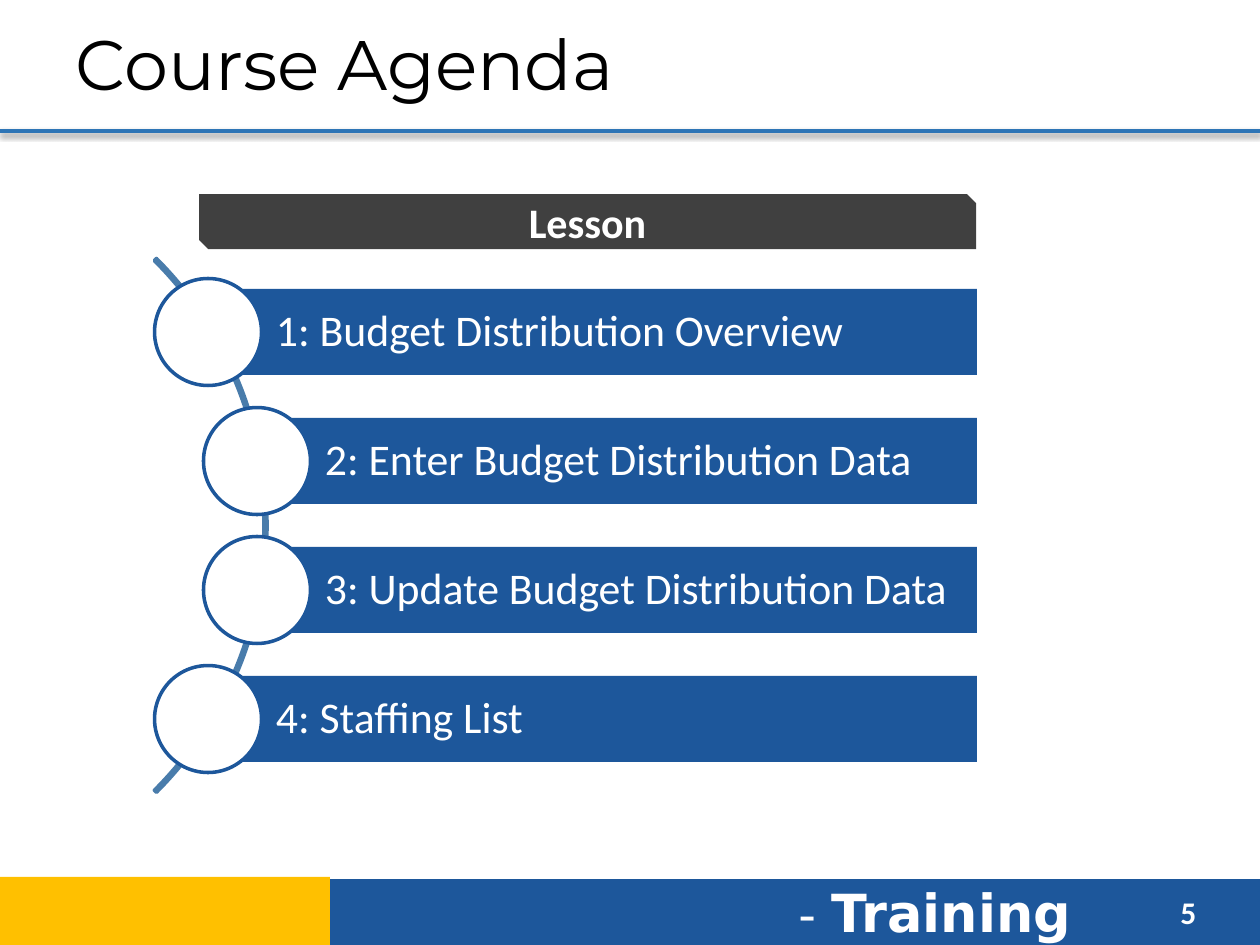
import pptx
import pptx.util
import pptx.dml.color
import pptx.enum.shapes
import pptx.enum.text
import pptx.oxml

COLORS = {
    "blue": "1D579B", "arc": "497CAB", "rule": "2E75B6", "gold": "FFC000",
    "header": "404040", "white": "FFFFFF", "black": "000000",
}
LESSONS = [
    "1: Budget Distribution Overview",
    "2: Enter Budget Distribution Data",
    "3: Update Budget Distribution Data",
    "4: Staffing List",
]
SHAPE = pptx.enum.shapes.MSO_SHAPE
ALIGN = pptx.enum.text.PP_ALIGN
MIDDLE = pptx.enum.text.MSO_ANCHOR.MIDDLE


def px(length):
    return pptx.util.Emu(round(length * 914400 / 126))


def color(name):
    return pptx.dml.color.RGBColor.from_string(COLORS[name])


def set_font(font, name, size, color_name, bold=False):
    font.name, font.size, font.bold = name, pptx.util.Pt(size), bold
    font.color.rgb = color(color_name)


def add_shape(slide, kind, box, fill=None, line=None):
    shape = slide.shapes.add_shape(kind, *map(px, box))
    shape.shadow.inherit = False
    if fill:
        shape.fill.solid()
        shape.fill.fore_color.rgb = color(fill)
    else:
        shape.fill.background()
    if line:
        shape.line.color.rgb = color(line)
        shape.line.width = pptx.util.Pt(2)
    else:
        shape.line.fill.background()
    return shape


def write(shape, text, size, align, bold=False):
    frame = shape.text_frame
    frame.word_wrap = True
    frame.vertical_anchor = MIDDLE
    paragraph = frame.paragraphs[0]
    paragraph.text = text
    paragraph.alignment = align
    set_font(paragraph.font, "Calibri", size, "white", bold)
    return paragraph


def add_rule(slide, y):
    rule = slide.shapes.add_connector(
        pptx.enum.shapes.MSO_CONNECTOR.STRAIGHT, 0, px(y), px(1260), px(y))
    rule.line.color.rgb = color("rule")
    rule.line.width = pptx.util.Pt(2.25)
    rule._element.spPr.append(pptx.oxml.parse_xml(
        '<a:effectLst xmlns:a="http://schemas.openxmlformats.org/drawingml/2006/main">'
        '<a:outerShdw blurRad="39370" dist="20320" dir="5400000" rotWithShape="0">'
        '<a:srgbClr val="000000"><a:alpha val="38000"/></a:srgbClr>'
        '</a:outerShdw></a:effectLst>'))


def add_footer(slide):
    add_shape(slide, SHAPE.RECTANGLE, (329, 879, 931, 69), "blue")
    label = slide.shapes.add_textbox(*map(px, (786, 874, 353, 77)))
    label.text_frame.word_wrap = True
    paragraph = label.text_frame.paragraphs[0]
    for text, size, bold in (("- ", 28, False), ("Training", 30, True)):
        run = paragraph.add_run()
        run.text = text
        set_font(run.font, "DejaVu Sans", size, "white", bold)
    number = slide.shapes.add_textbox(*map(px, (1168, 887, 76, 50)))
    write(number, "5", 18, ALIGN.LEFT, bold=True)
    add_shape(slide, SHAPE.RECTANGLE, (-1, 877, 331, 69), "gold")


def add_title(slide, text):
    title = slide.shapes.title
    title.left, title.top, title.width, title.height = map(px, (63, 4, 1134, 117))
    title.text_frame.vertical_anchor = MIDDLE
    paragraph = title.text_frame.paragraphs[0]
    paragraph.text = text
    paragraph.alignment = ALIGN.LEFT
    set_font(paragraph.font, "Montserrat", 40, "black")


def add_lesson(slide, text, left, top):
    right, height, diameter = 977, 86, 107
    bar = add_shape(slide, SHAPE.RECTANGLE, (left, top, right - left, height), "blue")
    paragraph = write(bar, text, 25, ALIGN.LEFT)
    paragraph.line_spacing = 0.9
    frame = bar.text_frame
    frame.margin_left = px(68)
    frame.margin_top = frame.margin_right = frame.margin_bottom = px(9)
    # Circle centred on the left end of the bar
    add_shape(slide, SHAPE.OVAL,
              (left - diameter / 2, top + (height - diameter) / 2, diameter, diameter),
              "white", "blue")


def add_agenda(slide):
    arc = add_shape(slide, SHAPE.BLOCK_ARC, (-488, 148, 755, 755), line="arc")
    for index, value in enumerate((189, 27, 0.004)):
        arc.adjustments[index] = value
    for index, text in enumerate(LESSONS):
        left = 257 if index in (1, 2) else 208
        add_lesson(slide, text, left, 289 + 129 * index)
    header = add_shape(slide, SHAPE.SNIP_2_DIAG_RECTANGLE, (199, 194, 777, 55), "header")
    write(header, "Lesson", 24, ALIGN.CENTER, bold=True)


def main():
    presentation = pptx.Presentation()
    presentation.slide_width, presentation.slide_height = px(1260), px(945)
    slide = presentation.slides.add_slide(presentation.slide_layouts[5])
    add_footer(slide)
    add_rule(slide, 131)
    add_title(slide, "Course Agenda")
    add_agenda(slide)
    presentation.save("out.pptx")


if __name__ == "__main__":
    main()
